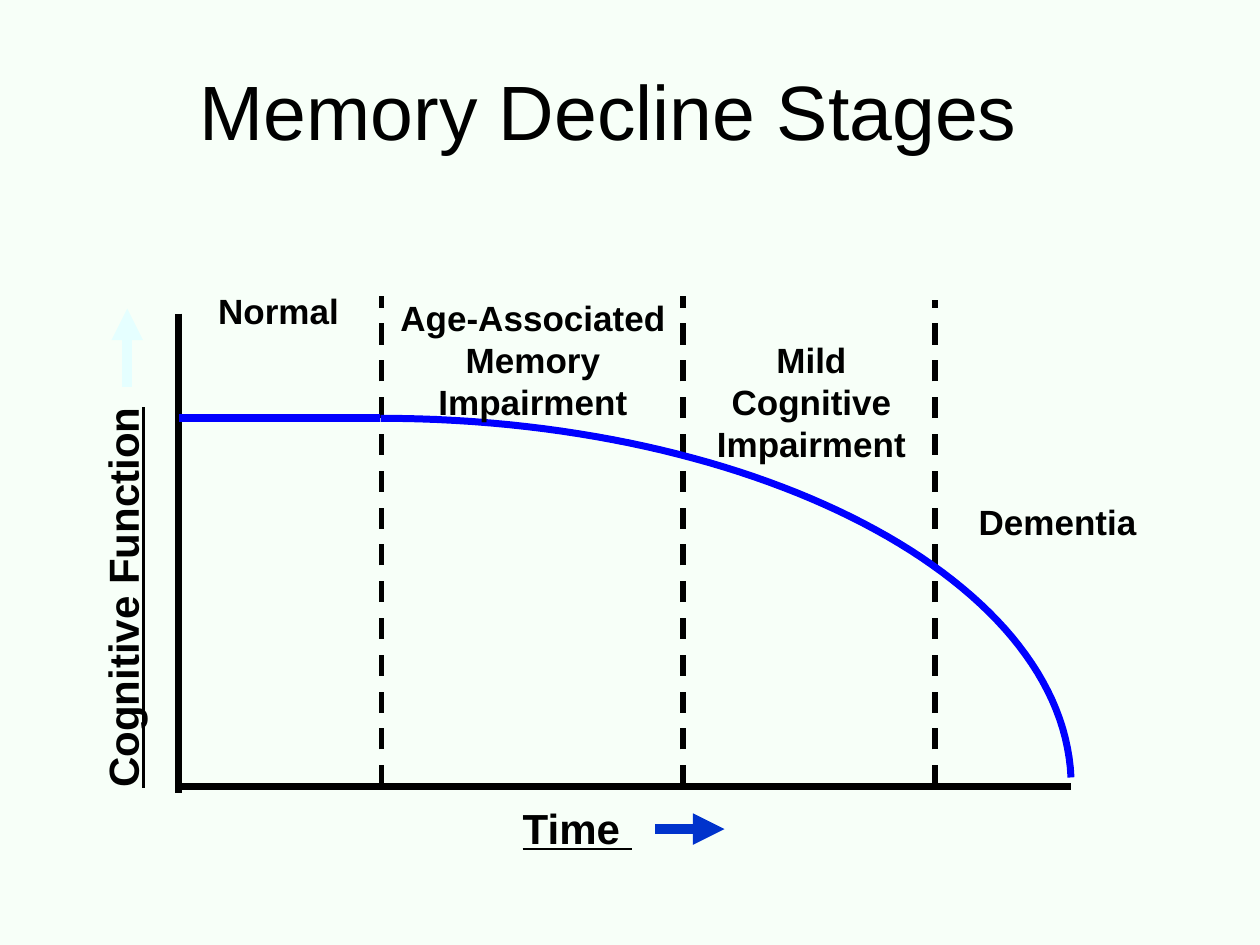
from lxml import etree
from pptx import Presentation
from pptx import util as u
from pptx.dml.color import RGBColor
from pptx.enum import dml, shapes, text
from pptx.oxml.ns import qn

INK = {"back": "F7FFF8", "text": "000000", "curve": "0000FF",
       "time": "0033CC", "mind": "E5FFFF"}
FONT = "Arial"
CELL = u.Inches(0.1)  # grid of 100 columns by 75 rows

LEFT, RIGHT, BASE, LEVEL = 14.2, 85, 62.4, 33.2
BOUNDS = [(30.3, 23.5), (54.2, 23.5), (74.2, 23.8)]  # column, top row
BEND = [(30.2, LEVEL), (60, LEVEL), (84.3, 45.9), (RIGHT, 61.7)]
STEPS = 60

STAGES = [
    (12.5, 22.5, 19.2, 4.4, ["Normal"]),
    (28.8, 23, 27, 11.1, ["Age-Associated Memory", "Impairment"]),
    (54.8, 26.4, 19.2, 11.1, ["Mild Cognitive Impairment"]),
    (72.3, 39.2, 22.5, 4.4, [" Dementia"]),
]


def grid(*cells):
    return [round(c * CELL) for c in cells]


def tint(name):
    return RGBColor.from_string(INK[name])


def style(line, ink, size):
    line.color.rgb = tint(ink)
    line.width = u.Pt(size)


def write(par, words, size, bold=True, under=None):
    run = par.add_run()
    run.text = words
    font = run.font
    font.name, font.size = FONT, u.Pt(size)
    font.bold, font.underline = bold, under
    font.color.rgb = tint("text")


def rule(slide, start, end, ink="text", size=4, dash=False, arrow=False):
    """Straight line between two grid points."""
    line = slide.shapes.add_connector(
        shapes.MSO_CONNECTOR.STRAIGHT, *grid(*start, *end))
    style(line.line, ink, size)
    if dash:
        line.line.dash_style = dml.MSO_LINE.DASH
    props = line._element.spPr
    if arrow:
        etree.SubElement(props.find(qn("a:ln")), qn("a:tailEnd"), type="triangle")
    etree.SubElement(props, qn("a:effectLst"))


def label(slide, box, lines, size=20, wrap=True, under=None, turn=0):
    shape = slide.shapes.add_textbox(*grid(*box))
    shape.rotation = turn
    frame = shape.text_frame
    frame.word_wrap = wrap
    for i, words in enumerate(lines):
        par = frame.add_paragraph() if i else frame.paragraphs[0]
        par.alignment = text.PP_ALIGN.CENTER if wrap else text.PP_ALIGN.LEFT
        write(par, words, size, under=under)


def bezier(t):
    """Grid point at share t of the decline."""
    parts = ((1 - t) ** 3, 3 * t * (1 - t) ** 2, 3 * t * t * (1 - t), t ** 3)
    return [sum(w * p[k] for w, p in zip(parts, BEND)) for k in (0, 1)]


def curve(slide):
    dots = [grid(*bezier(i / STEPS)) for i in range(STEPS + 1)]
    pen = slide.shapes.build_freeform(*dots[0])
    pen.add_line_segments(dots[1:], close=False)
    shape = pen.convert_to_shape()
    shape.shadow.inherit = False
    shape.fill.background()
    style(shape.line, "curve", 4)


def title(slide, words):
    head = slide.shapes.title
    head.left, head.top, head.width, head.height = grid(3.3, 1.2, 90, 15)
    frame = head.text_frame
    frame.vertical_anchor = text.MSO_ANCHOR.MIDDLE
    par = frame.paragraphs[0]
    par.alignment = text.PP_ALIGN.CENTER
    write(par, words, 44, bold=False)


def main():
    deck = Presentation()
    deck.slide_width, deck.slide_height = grid(100, 75)
    slide = deck.slides.add_slide(deck.slide_layouts[5])
    fill = slide.background.fill
    fill.solid()
    fill.fore_color.rgb = tint("back")

    title(slide, "Memory Decline Stages")
    rule(slide, (LEFT, 24.9), (LEFT, 62.9))
    rule(slide, (LEFT, BASE), (RIGHT, BASE))
    for col, top in BOUNDS:
        rule(slide, (col, BASE), (col, top), size=3, dash=True)
    curve(slide)
    rule(slide, BEND[0], (LEFT, LEVEL), "curve", 4.5)
    for *box, lines in STAGES:
        label(slide, box, lines)
    label(slide, (40.5, 63.2, 10.8, 5.1), ["Time "], 24, False, True)
    label(slide, (-6.5, 44.7, 32.5, 5.1), ["Cognitive Function"],
          24, False, True, 270)
    rule(slide, (52, 65.8), (57.5, 65.8), "time", 6, arrow=True)
    rule(slide, (10.1, 30.7), (10.1, 24.5), "mind", 6, arrow=True)
    deck.save("out.pptx")


if __name__ == "__main__":
    main()
